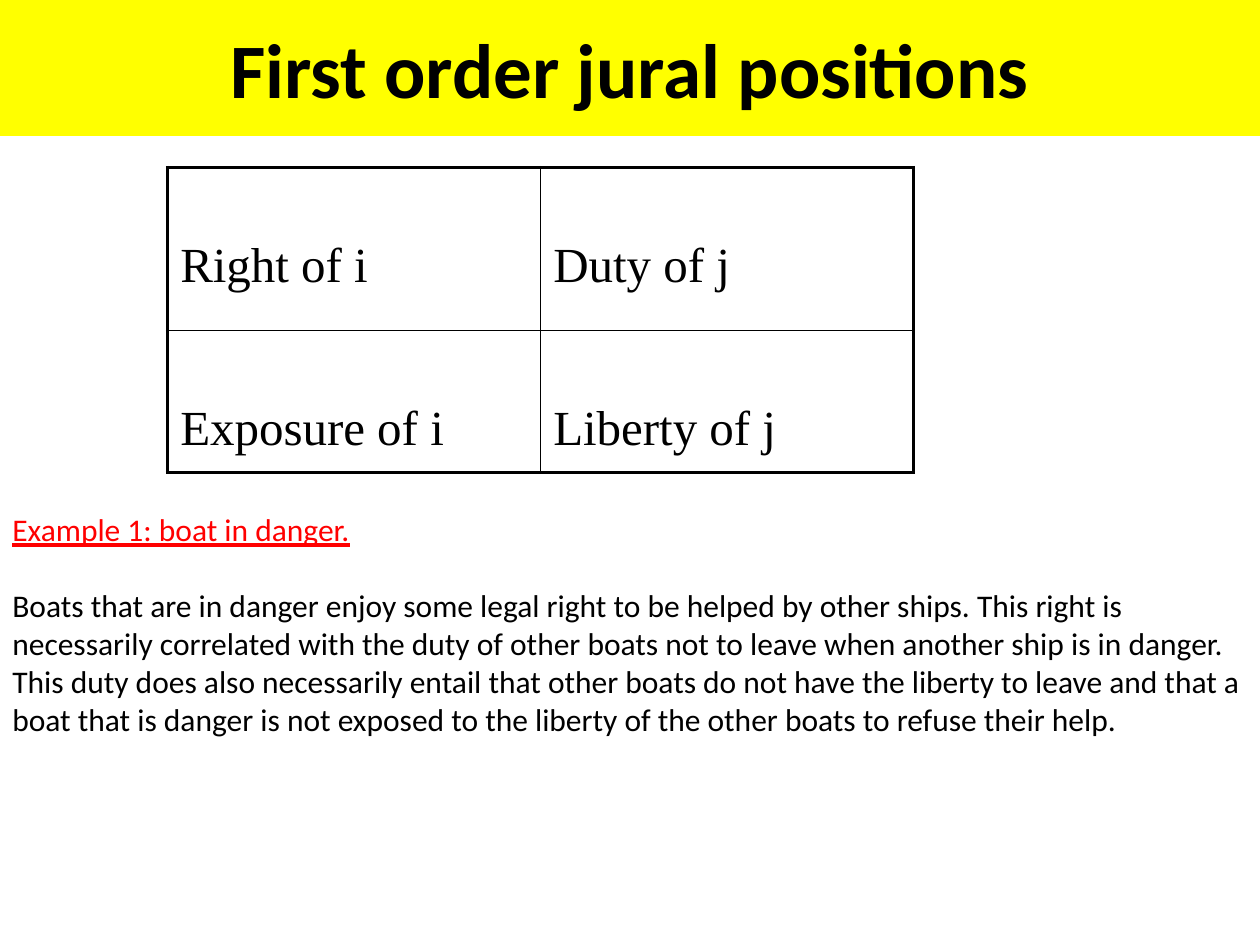
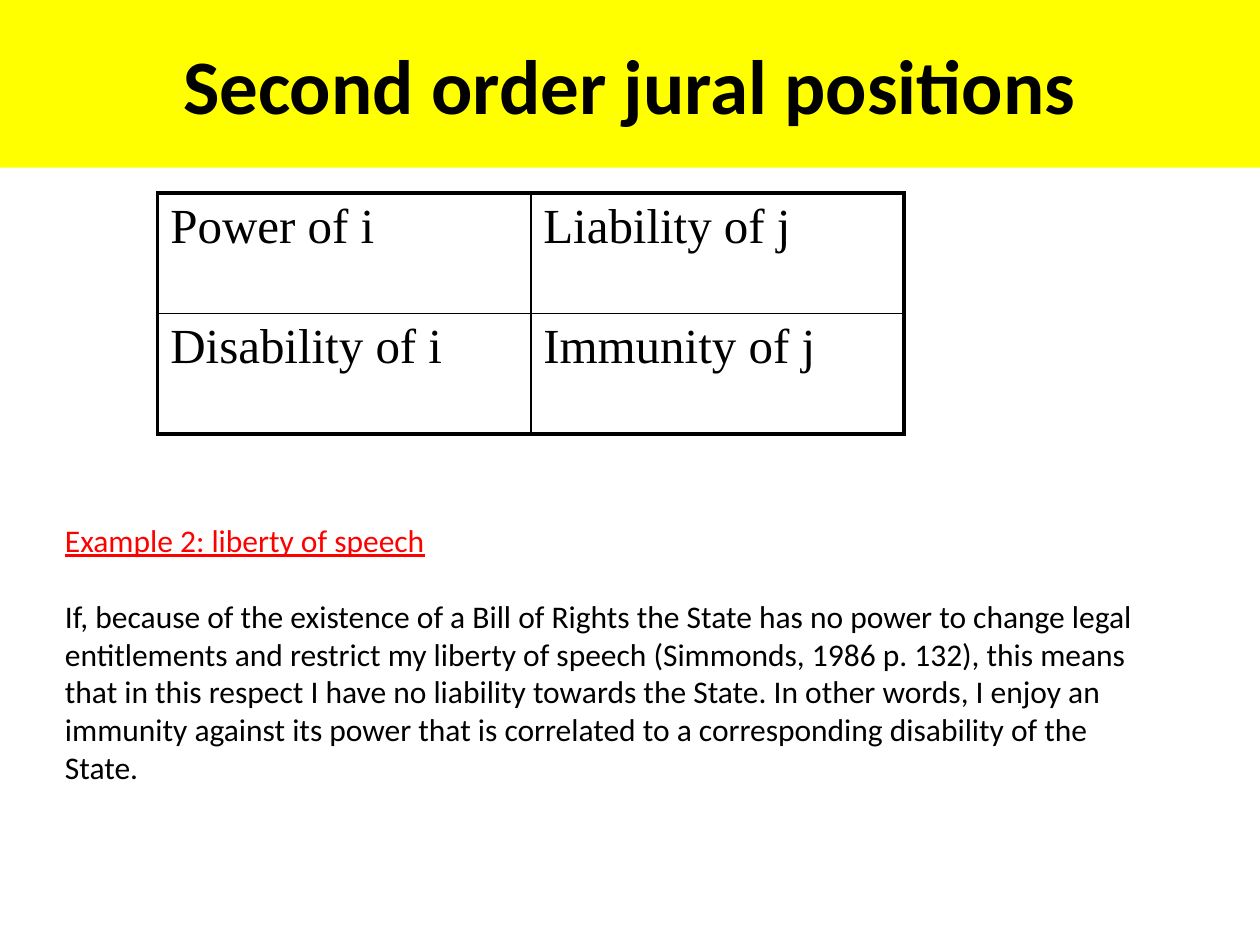
from dataclasses import dataclass
from lxml.etree import SubElement
from pptx import Presentation
from pptx.dml.color import RGBColor
from pptx.enum.shapes import MSO_SHAPE
from pptx.enum.text import MSO_ANCHOR, PP_ALIGN
from pptx.oxml.ns import qn
from pptx.util import Cm, Pt


@dataclass(frozen=True)
class Theme:
    band: RGBColor = RGBColor(255, 255, 0)
    ink: RGBColor = RGBColor(0, 0, 0)
    red: RGBColor = RGBColor(255, 0, 0)
    sans: str = "Calibri"
    serif: str = "Times New Roman"
    title: float = 44
    grid: float = 28
    body: float = 18
    thick: float = 2.25
    thin: float = 1


theme = Theme()


def write(para, text, size, face, color, bold=False, line=False):
    run = para.add_run()
    run.text = text
    font = run.font
    font.size, font.name = Pt(size), face
    font.bold, font.underline = bold, line
    font.color.rgb = color


def edge(cell, row, col):
    props = cell._tc.get_or_add_tcPr()
    outer = {"L": col == 0, "R": col == 1, "T": row == 0, "B": row == 1}
    for spot, (side, out) in enumerate(outer.items()):
        line = SubElement(props, qn(f"a:ln{side}"))
        line.set("w", str(Pt(theme.thick if out else theme.thin)))
        fill = SubElement(line, qn("a:solidFill"))
        SubElement(fill, qn("a:srgbClr")).set("val", str(theme.ink))
        props.insert(spot, line)


pages = [
    {
        "title": "First order jural positions",
        "band": 2.74,
        "grid": (3.38, 3.38),
        "rows": (3.28, 2.87),
        "pad": 1.44,
        "cells": (("Right of i", "Duty of j"), ("Exposure of i", "Liberty of j")),
        "box": (0, 10.16, 25.4, 9.73),
        "head": "Example 1: boat in danger.",
        "body": "Boats that are in danger enjoy some legal right to be helped by other ships. "
                "This right is necessarily correlated with the duty of other boats not to leave "
                "when another ship is in danger. This duty does also necessarily entail that "
                "other boats do not have the liberty to leave and that a boat that is danger is "
                "not exposed to the liberty of the other boats to refuse their help.",
    },
    {
        "title": "Second order jural positions",
        "band": 3.38,
        "grid": (3.18, 3.89),
        "rows": (2.43, 2.43),
        "pad": 0.13,
        "cells": (("Power of i", "Liability of j"), ("Disability of i", "Immunity of j")),
        "box": (1.06, 10.37, 22.12, 8.38),
        "head": "Example 2: liberty of speech",
        "body": "If, because of the existence of a Bill of Rights the State has no power to "
                "change legal entitlements and restrict my liberty of speech (Simmonds, 1986 "
                "p. 132), this means that in this respect I have no liability towards the State. "
                "In other words, I enjoy an immunity against its power that is correlated to a "
                "corresponding disability of the State.",
    },
]

deck = Presentation()
deck.slide_width, deck.slide_height = Cm(25.4), Cm(19.05)

for page in pages:
    slide = deck.slides.add_slide(deck.slide_layouts[6])

    band = slide.shapes.add_shape(MSO_SHAPE.RECTANGLE, 0, 0, deck.slide_width, Cm(page["band"]))
    band.shadow.inherit = False
    band.fill.solid()
    band.fill.fore_color.rgb = theme.band
    band.line.fill.background()
    band.text_frame.word_wrap = True
    band.text_frame.vertical_anchor = MSO_ANCHOR.MIDDLE
    para = band.text_frame.paragraphs[0]
    para.alignment = PP_ALIGN.CENTER
    write(para, page["title"], theme.title, theme.sans, theme.ink, bold=True)

    left, top = page["grid"]
    grid = slide.shapes.add_table(
        2, 2, Cm(left), Cm(top), Cm(15.04), Cm(sum(page["rows"]))).table
    grid.first_row = grid.horz_banding = False
    for row, (high, words) in enumerate(zip(page["rows"], page["cells"])):
        grid.rows[row].height = Cm(high)
        for col, word in enumerate(words):
            cell = grid.cell(row, col)
            cell.margin_top = Cm(page["pad"])
            cell.fill.background()
            edge(cell, row, col)
            para = cell.text_frame.paragraphs[0]
            para.alignment = PP_ALIGN.JUSTIFY
            write(para, word, theme.grid, theme.serif, theme.ink)

    frame = slide.shapes.add_textbox(*map(Cm, page["box"])).text_frame
    frame.word_wrap = True
    write(frame.paragraphs[0], page["head"], theme.body, theme.sans, theme.red, line=True)
    para = frame.add_paragraph()
    para.space_before = Pt(22)
    write(para, page["body"], theme.body, theme.sans, theme.ink)

deck.save("out.pptx")
